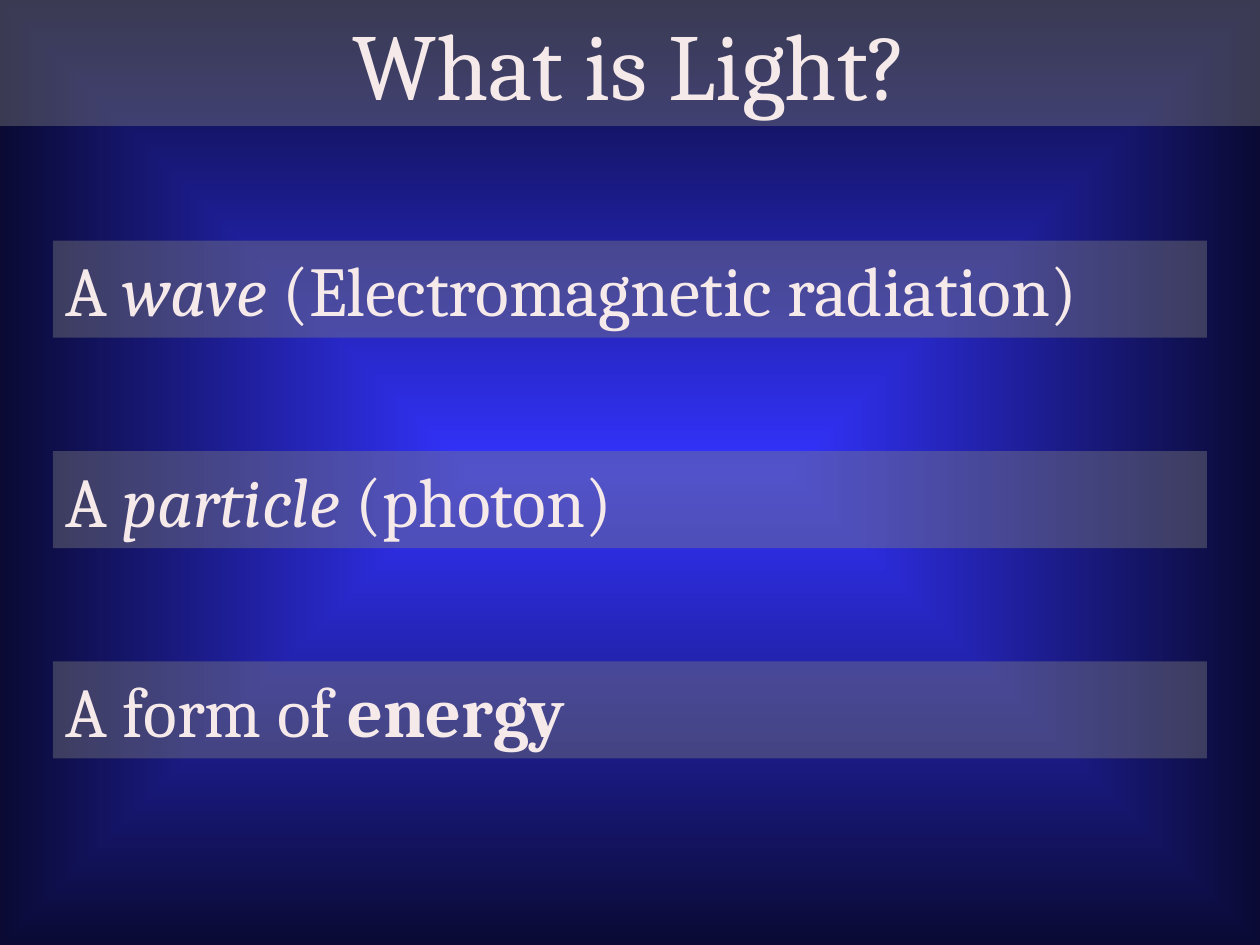
from lxml.etree import SubElement
from pptx import Presentation
from pptx.dml.color import RGBColor
from pptx.enum.text import MSO_AUTO_SIZE as AutoSize, PP_ALIGN as Align
from pptx.oxml.ns import qn
from pptx.util import Inches, Pt

WIDTH, HEIGHT = Inches(10), Inches(7.5)
GLOW = RGBColor(0x33, 0x33, 0xFF)
NIGHT = RGBColor(0x0A, 0x0A, 0x34)
GREY = RGBColor(0x80, 0x80, 0x80)
CREAM = RGBColor(0xF5, 0xE9, 0xE9)
FONT = "Cambria"
BAR_OPACITY = 41
HANGING_INDENT = Inches(0.38)

TITLE = [("What is Light?", {})]
ANSWERS = [
    [("A ", {}), ("wave ", {"italic": True}), ("(Electromagnetic radiation)", {})],
    [("A ", {}), ("particle ", {"italic": True}), ("(photon)", {})],
    [("A form of ", {}), ("energy", {"bold": True})],
]


def paint_background(slide):
    """Glow from the centre of the slide out to dark edges."""
    fill = slide.background.fill
    fill.gradient()
    for stop, position, color in zip(fill.gradient_stops, (0, 1), (GLOW, NIGHT)):
        stop.position = position
        stop.color.rgb = color
    gradient = slide.element.find(".//" + qn("a:gradFill"))
    gradient.remove(gradient.find(qn("a:lin")))
    glow_path = SubElement(gradient, qn("a:path"), path="shape")
    SubElement(glow_path, qn("a:fillToRect"), dict.fromkeys("ltrb", "50000"))


def add_bar(slide, box, runs, size):
    """Translucent grey bar holding one line of text; returns its paragraph."""
    bar = slide.shapes.add_textbox(*box)
    bar.fill.solid()
    bar.fill.fore_color.rgb = GREY
    tint = bar.fill._xPr.find(".//" + qn("a:srgbClr"))
    SubElement(tint, qn("a:alpha"), val=str(BAR_OPACITY * 1000))
    frame = bar.text_frame
    frame.word_wrap = True
    frame.auto_size = AutoSize.SHAPE_TO_FIT_TEXT
    line = frame.paragraphs[0]
    for text, emphasis in runs:
        run = line.add_run()
        run.text = text
        run.font.color.rgb = CREAM
        for key, value in {"name": FONT, "size": Pt(size), **emphasis}.items():
            setattr(run.font, key, value)
    return line


def add_title(slide, box):
    add_bar(slide, box, TITLE, 54).alignment = Align.CENTER


def add_answers(slide, box):
    """One bar per answer, at an equal pitch down the box."""
    left, top, width, height = box
    bar_height = Inches(0.77)
    pitch = (height - bar_height) // (len(ANSWERS) - 1)
    for row, answer in enumerate(ANSWERS):
        line = add_bar(slide, (left, top + row * pitch, width, bar_height), answer, 40)
        properties = line._p.get_or_add_pPr()
        properties.set("marL", str(HANGING_INDENT))
        properties.set("indent", str(-HANGING_INDENT))
        tabs = SubElement(properties, qn("a:tabLst"))
        SubElement(tabs, qn("a:tab"), pos=str(HANGING_INDENT), algn="l")


def main():
    deck = Presentation()
    deck.slide_width, deck.slide_height = WIDTH, HEIGHT
    slide = deck.slides.add_slide(deck.slide_layouts[6])
    paint_background(slide)
    add_title(slide, (0, 0, WIDTH, Inches(1)))
    margin = Inches(0.42)
    add_answers(slide, (margin, Inches(1.91), WIDTH - 2 * margin, Inches(4.11)))
    deck.save("out.pptx")


if __name__ == "__main__":
    main()
